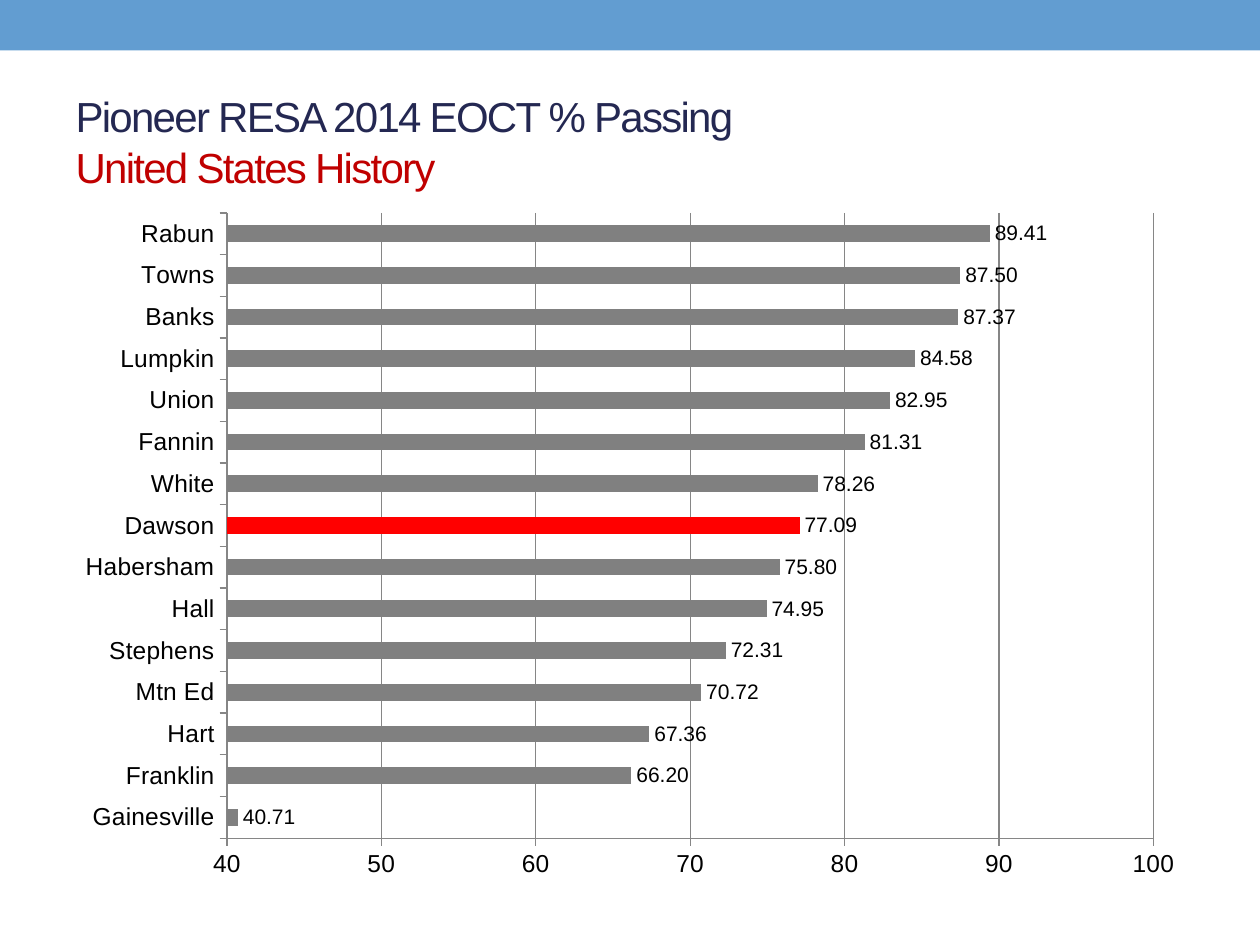
from dataclasses import dataclass

from pptx import Presentation
from pptx.chart.data import CategoryChartData
from pptx.dml.color import RGBColor
from pptx.enum.chart import XL_CHART_TYPE, XL_LABEL_POSITION, XL_TICK_MARK
from pptx.enum.shapes import MSO_SHAPE
from pptx.enum.text import MSO_ANCHOR, PP_ALIGN
from pptx.util import Inches, Pt

BAR_CLUSTERED = XL_CHART_TYPE.BAR_CLUSTERED
OUTSIDE_END = XL_LABEL_POSITION.OUTSIDE_END
TICK_OUT, TICK_NONE = XL_TICK_MARK.OUTSIDE, XL_TICK_MARK.NONE
RECTANGLE = MSO_SHAPE.RECTANGLE
MIDDLE, LEFT = MSO_ANCHOR.MIDDLE, PP_ALIGN.LEFT


@dataclass(frozen=True)
class Theme:
    font: str = "Arial"
    band: str = "629DD1"
    title: str = "242852"
    subject: str = "C00000"
    text: str = "000000"
    bar: str = "808080"
    highlight: str = "FF0000"
    grid: str = "868686"
    title_size: int = 24
    axis_size: int = 14
    label_size: int = 12


THEME = Theme()
HIGHLIGHTED = "Dawson"
PASSING = {
    "Gainesville": 40.71, "Franklin": 66.20, "Hart": 67.36, "Mtn Ed": 70.72,
    "Stephens": 72.31, "Hall": 74.95, "Habersham": 75.80, "Dawson": 77.09,
    "White": 78.26, "Fannin": 81.31, "Union": 82.95, "Lumpkin": 84.58,
    "Banks": 87.37, "Towns": 87.50, "Rabun": 89.41,
}


def rgb(color):
    return RGBColor.from_string(color)


def style_font(font, size, color):
    font.name = THEME.font
    font.size = Pt(size)
    font.bold = False
    font.color.rgb = rgb(color)


def add_text(paragraph, text, *, size, color, spacing=0):
    run = paragraph.add_run()
    run.text = text
    style_font(run.font, size, color)
    # Character spacing is stored in hundredths of a point
    run.font._element.set("spc", str(spacing * 100))


def place(shape, box):
    shape.left, shape.top, shape.width, shape.height = map(Inches, box)


def add_band(slide, box):
    band = slide.shapes.add_shape(RECTANGLE, *map(Inches, box))
    band.shadow.inherit = False
    band.fill.solid()
    band.fill.fore_color.rgb = rgb(THEME.band)
    band.line.fill.background()


def add_title(slide, box):
    title = slide.shapes.title
    place(title, box)
    frame = title.text_frame
    frame.word_wrap = True
    frame.vertical_anchor = MIDDLE
    heading = frame.paragraphs[0]
    heading.alignment = LEFT
    add_text(heading, "Pioneer RESA 2014 EOCT % Passing",
             size=THEME.title_size, color=THEME.title, spacing=-1)
    heading.add_line_break()
    add_text(heading, "United States History",
             size=THEME.title_size, color=THEME.subject, spacing=-1)


def style_axis(axis):
    axis.major_tick_mark = TICK_OUT
    axis.minor_tick_mark = TICK_NONE
    axis.format.line.color.rgb = rgb(THEME.grid)
    style_font(axis.tick_labels.font, THEME.axis_size, THEME.text)


def add_passing_chart(slide, box):
    passing = CategoryChartData()
    passing.categories = list(PASSING)
    passing.add_series("Series 1", list(PASSING.values()))
    chart = slide.shapes.add_chart(
        BAR_CLUSTERED, *map(Inches, box), passing).chart
    chart.has_legend = False
    chart.has_title = False
    style_font(chart.font, THEME.axis_size, THEME.text)

    # Axes and gridlines
    systems, percent = chart.category_axis, chart.value_axis
    for axis in (systems, percent):
        style_axis(axis)
    systems.has_major_gridlines = False
    percent.minimum_scale, percent.maximum_scale = 40, 100
    percent.major_unit = 10
    percent.tick_labels.number_format = "0"
    percent.tick_labels.number_format_is_linked = False
    percent.has_major_gridlines = True
    percent.major_gridlines.format.line.color.rgb = rgb(THEME.grid)

    # Bars, with one school system picked out
    plot = chart.plots[0]
    plot.gap_width = 150
    plot.vary_by_categories = False
    bars = plot.series[0]
    dawson = bars.points[list(PASSING).index(HIGHLIGHTED)]
    for part, color in ((bars, THEME.bar), (dawson, THEME.highlight)):
        part.format.fill.solid()
        part.format.fill.fore_color.rgb = rgb(color)

    # Value labels
    labels = bars.data_labels
    labels.show_value = True
    labels.position = OUTSIDE_END
    labels.number_format = "###0.00"
    labels.number_format_is_linked = False
    style_font(labels.font, THEME.label_size, THEME.text)


def main():
    deck = Presentation()
    deck.slide_width, deck.slide_height = Inches(10), Inches(7.5)
    slide = deck.slides.add_slide(deck.slide_layouts[5])
    add_band(slide, (0, 0, 10, 0.4))
    add_title(slide, (0.5, 0.58, 9, 1.08))
    add_passing_chart(slide, (0.5, 1.58, 9, 5.5))
    deck.save("out.pptx")


if __name__ == "__main__":
    main()
